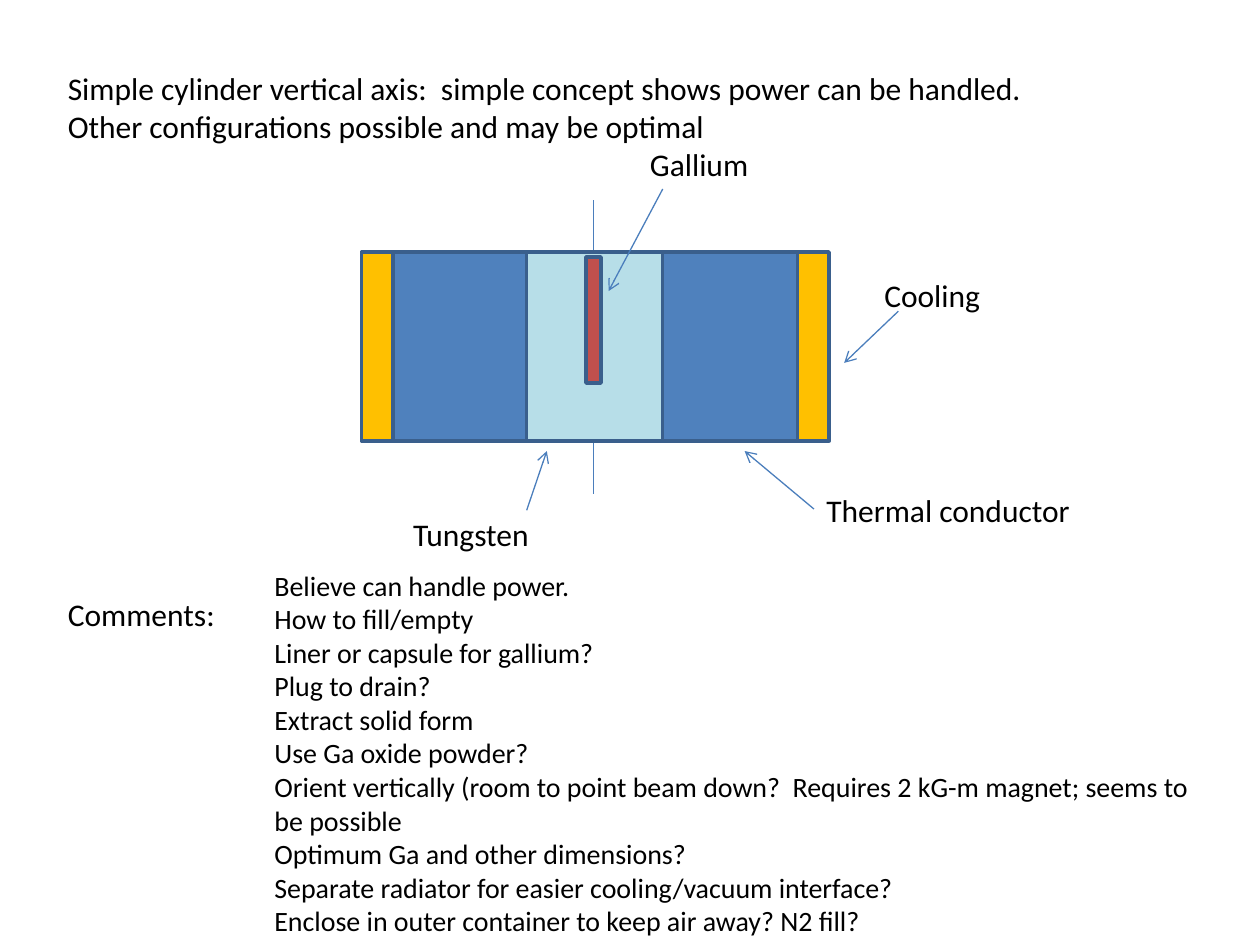
from lxml.etree import SubElement
from pptx import Presentation
from pptx.dml.color import RGBColor
from pptx.enum.shapes import MSO_CONNECTOR as Connector, MSO_SHAPE as Shape
from pptx.enum.text import MSO_AUTO_SIZE as AutoSize
from pptx.oxml.ns import qn
from pptx.util import Inches, Pt

BLACK = RGBColor(0x00, 0x00, 0x00)
CONDUCTOR_BLUE = RGBColor(0x4F, 0x81, 0xBD)
TUNGSTEN_AQUA = RGBColor(0xB7, 0xDE, 0xE8)
GALLIUM_RED = RGBColor(0xC0, 0x50, 0x4D)
COOLING_GOLD = RGBColor(0xFF, 0xC0, 0x00)
OUTLINE = RGBColor(0x3A, 0x5F, 0x8C)
LINE_BLUE = RGBColor(0x4B, 0x7E, 0xBC)

CELL = 0.25  # inches; the slide is a grid of 40 columns by 30 rows
COLUMNS, ROWS = 40, 30


def grid(*cells):
    """Turn columns and rows into slide lengths."""
    return [Inches(cell * CELL) for cell in cells]


def write(frame, *lines, font="Calibri", size=18, color=BLACK, wrap=True):
    """Fill a text frame with one paragraph per line."""
    frame.word_wrap = wrap
    frame.auto_size = AutoSize.SHAPE_TO_FIT_TEXT
    for index, line in enumerate(lines):
        paragraph = frame.add_paragraph() if index else frame.paragraphs[0]
        run = paragraph.add_run()
        run.text = line
        run.font.name, run.font.size = font, Pt(size)
        run.font.color.rgb = color


class Sketch:
    """Holds the line style and the slide being drawn on."""

    outline_width = Pt(2)
    line_width = Pt(0.75)

    def __init__(self, slide):
        self.shapes = slide.shapes

    def block(self, left, top, width, height, fill):
        rect = self.shapes.add_shape(Shape.RECTANGLE, *grid(left, top, width, height))
        rect.shadow.inherit = False
        rect.fill.solid()
        rect.fill.fore_color.rgb = fill
        rect.line.color.rgb = OUTLINE
        rect.line.width = self.outline_width

    def text(self, left, top, width, height, *lines, **style):
        box = self.shapes.add_textbox(*grid(left, top, width, height))
        write(box.text_frame, *lines, **style)

    def line(self, start, end, arrow=False):
        stroke = self.shapes.add_connector(Connector.STRAIGHT, *grid(*start, *end))
        stroke.line.color.rgb = LINE_BLUE
        stroke.line.width = self.line_width
        properties = stroke._element.spPr
        if arrow:
            SubElement(properties.find(qn("a:ln")), qn("a:tailEnd"), type="arrow")
        SubElement(properties, qn("a:effectLst"))


def main():
    deck = Presentation()
    deck.slide_width, deck.slide_height = grid(COLUMNS, ROWS)
    sketch = Sketch(deck.slides.add_slide(deck.slide_layouts[6]))

    # Vertical axis, behind the cylinder
    sketch.line((18.84, 6.36), (18.84, 15.68))

    # Cylinder cross-section
    top, height = 8, 6
    sketch.block(12.32, top, 13, height, CONDUCTOR_BLUE)
    sketch.block(16.72, top, 4.32, height, TUNGSTEN_AQUA)
    sketch.block(18.6, top + 0.16, 0.48, 4, GALLIUM_RED)
    for cooling_left in (25.32, 11.48):
        sketch.block(cooling_left, top, 1, height, COOLING_GOLD)

    # Heading
    margin = 1.76
    sketch.text(margin, 2, 32.68, 2.84,
                "Simple cylinder vertical axis:  simple concept shows power can be "
                "handled.  Other configurations possible and may be optimal")

    # Comments
    sketch.text(8.32, 17.84, 30.68, 12.24,
                "Believe can handle power.",
                "How to fill/empty",
                "Liner or capsule for gallium?",
                "Plug to drain?",
                "Extract solid form",
                "Use Ga oxide powder?",
                "Orient vertically (room to point beam down?  Requires 2 kG-m magnet; "
                "seems to be possible",
                "Optimum Ga and other dimensions?",
                "Separate radiator for easier cooling/vacuum interface?",
                "Enclose in outer container to keep air away? N2 fill?",
                size=16)
    label_height = 1.6
    sketch.text(margin, 18.68, 5.52, label_height, "Comments:", wrap=False)

    # Part labels, each with an arrow to its part
    callouts = [
        ("Cooling", (27.68, 8.56), 3.88, (28.52, 9.88), (26.8, 11.52)),
        ("Tungsten", (12.72, 16.16), 4.52, (16.72, 16.2), (17.36, 14.32)),
        ("Thermal conductor", (25.84, 15.4), 8.64, (25.84, 16.16), (23.64, 14.32)),
        ("Gallium", (20.24, 4.4), 3.96, (21.04, 6), (19.32, 9.24)),
    ]
    for name, corner, width, start, tip in callouts:
        sketch.text(*corner, width, label_height, name, wrap=False)
        sketch.line(start, tip, arrow=True)

    deck.save("out.pptx")


if __name__ == "__main__":
    main()
